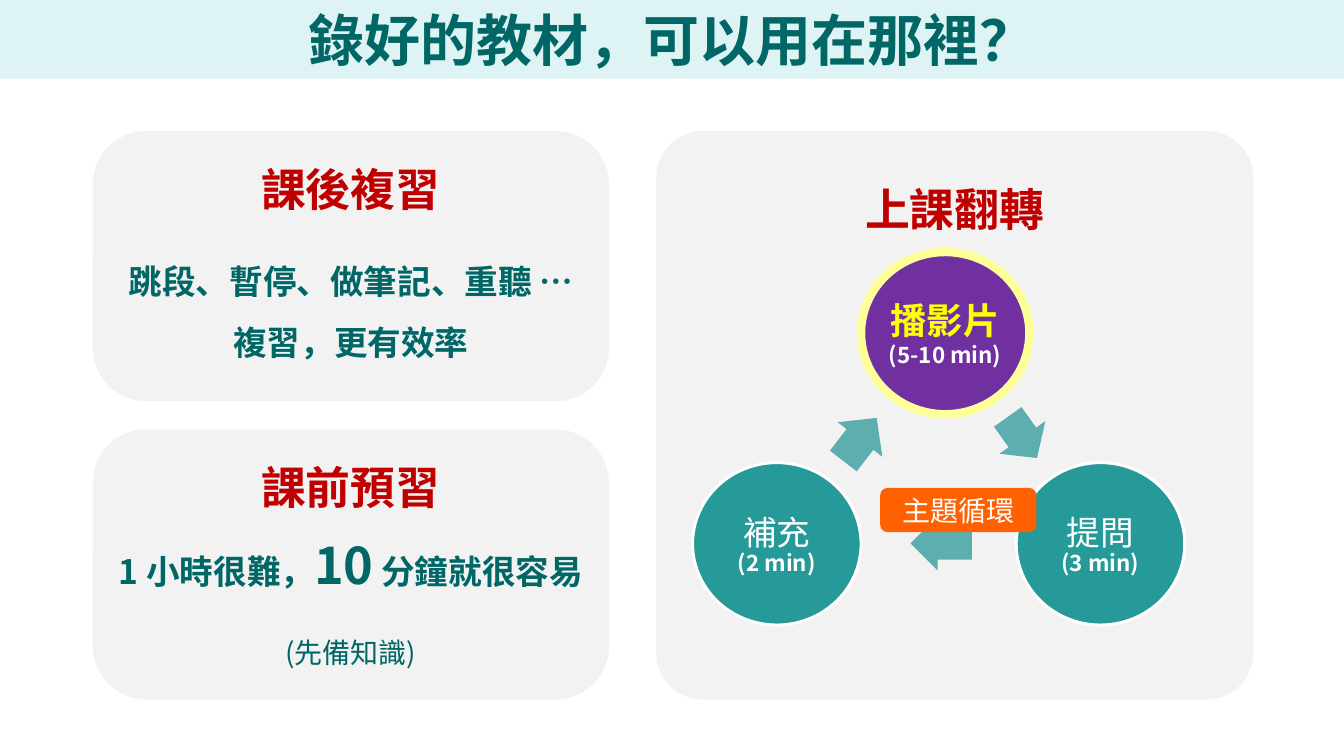
from dataclasses import dataclass
from lxml.etree import SubElement
from pptx import Presentation
from pptx.dml.color import RGBColor
from pptx.enum.shapes import MSO_SHAPE
from pptx.enum.text import MSO_ANCHOR, PP_ALIGN
from pptx.oxml.ns import qn
from pptx.util import Inches, Pt


@dataclass(frozen=True)
class Theme:
    font: str = "Noto Sans CJK SC"
    band: str = "DEF3F3"
    card: str = "F2F2F2"
    dark: str = "006666"
    red: str = "C00000"
    teal: str = "269999"
    arrow: str = "5DAEAE"
    purple: str = "7030A0"
    halo: str = "FFFF99"
    yellow: str = "FFFF00"
    white: str = "FFFFFF"
    orange: str = "FF6000"
    title: int = 40
    heading: int = 32
    big: int = 36
    key: int = 26
    body: int = 24
    small: int = 20
    note: int = 16


T = Theme()


def para(*runs, before=0, line=1.0):
    return runs, before, line


# A run is (text, size, colour, bold); space before is in points.
TITLE = [para(("錄好的教材，可以用在那裡？", T.title, T.dark, True))]
REVIEW = [
    para(("課後複習", T.heading, T.red, True)),
    para(("跳段、暫停、做筆記、重聽 …", T.body, T.dark, True), before=21, line=1.4),
    para(("複習，更有效率", T.body, T.dark, True), line=1.5),
]
PREVIEW = [
    para(("課前預習", T.heading, T.red, True)),
    para(("1 小時很難，", T.body, T.dark, True), ("10", T.big, T.dark, True),
         (" 分鐘就很容易", T.body, T.dark, True), before=15),
    para(("(先備知識)", T.small, T.dark, False), before=29),
]
FLIP = [para(("上課翻轉", T.heading, T.red, True), line=1.6)]
BADGE = [para(("主題循環", T.small, T.white, False))]


def step(name, minutes, size=T.body, color=T.white, bold=False, line=0.9):
    return [para((name, size, color, bold)),
            para((minutes, T.note, T.white, True), line=line)]


# Box, corner radius, anchor, (top, bottom) insets, text
CARDS = [
    ((0.92, 1.3, 5.12, 2.68), 0.198, MSO_ANCHOR.MIDDLE, (0, 0.08), REVIEW),
    ((0.92, 4.26, 5.12, 2.68), 0.198, MSO_ANCHOR.MIDDLE, (0.05, 0.05), PREVIEW),
    ((6.51, 1.3, 5.92, 5.64), 0.082, MSO_ANCHOR.TOP, (0.05, 0.05), FLIP),
]
# Left, top, fill, line colour, line width, text
STEPS = [
    (8.54, 2.5, T.purple, T.halo, 6,
     step("播影片", "(5-10 min)", T.key, T.yellow, True, 1.0)),
    (10.08, 4.59, T.teal, T.white, 2, step("提問", "(3 min)")),
    (6.87, 4.59, T.teal, T.white, 2, step("補充", "(2 min)")),
]
STEP_SIZE = (1.67, 1.61)
# Box, rotation
ARROWS = [
    ((9.89, 4.06, 0.5, 0.56), 54.6),
    ((9.03, 5.12, 0.61, 0.54), 180),
    ((8.26, 4.08, 0.54, 0.56), 307.7),
]


def rgb(value):
    return RGBColor.from_string(value)


def write(sp, paragraphs, anchor=MSO_ANCHOR.MIDDLE, insets=(0.1, 0.05, 0.1, 0.05)):
    """Fill a shape with centred paragraphs; insets are left, top, right, bottom."""
    tf = sp.text_frame
    tf.word_wrap = True
    tf.vertical_anchor = anchor
    tf.margin_left, tf.margin_top, tf.margin_right, tf.margin_bottom = map(Inches, insets)
    for i, (runs, before, line) in enumerate(paragraphs):
        p = tf.add_paragraph() if i else tf.paragraphs[0]
        p.alignment = PP_ALIGN.CENTER
        p.space_before, p.space_after, p.line_spacing = Pt(before), Pt(0), line
        for text, size, color, bold in runs:
            r = p.add_run()
            r.text = text
            r.font.size, r.font.bold, r.font.name = Pt(size), bold, T.font
            r.font.color.rgb = rgb(color)
            SubElement(r.font._element, qn("a:ea")).set("typeface", T.font)


def add(slide, kind, box, fill, adjust=(), line=None):
    sp = slide.shapes.add_shape(kind, *map(Inches, box))
    sp.shadow.inherit = False
    sp.fill.solid()
    sp.fill.fore_color.rgb = rgb(fill)
    for i, value in enumerate(adjust):
        sp.adjustments[i] = value
    if line:
        color, width = line
        sp.line.color.rgb = rgb(color)
        sp.line.width = Pt(width)
    else:
        sp.line.fill.background()
    return sp


def add_title(slide):
    sp = slide.shapes.title
    sp.left, sp.top, sp.width, sp.height = map(Inches, (0, 0, 13.33, 0.78))
    sp.fill.solid()
    sp.fill.fore_color.rgb = rgb(T.band)
    write(sp, TITLE)


def add_cycle(slide):
    for left, top, fill, color, width, text in STEPS:
        sp = add(slide, MSO_SHAPE.OVAL, (left, top, *STEP_SIZE), fill, line=(color, width))
        write(sp, text, insets=(0.03,) * 4)
    for box, angle in ARROWS:
        sp = add(slide, MSO_SHAPE.RIGHT_ARROW, box, T.arrow, (0.6, 0.5))
        sp.rotation = angle
    write(add(slide, MSO_SHAPE.ROUNDED_RECTANGLE, (8.73, 4.84, 1.55, 0.44), T.orange), BADGE)


def main():
    prs = Presentation()
    prs.slide_width, prs.slide_height = Inches(13.33), Inches(7.5)
    slide = prs.slides.add_slide(prs.slide_layouts[5])
    add_title(slide)
    for box, radius, anchor, (top, bottom), text in CARDS:
        sp = add(slide, MSO_SHAPE.ROUNDED_RECTANGLE, box, T.card, (radius,))
        write(sp, text, anchor, (0, top, 0, bottom))
    add_cycle(slide)
    prs.save("out.pptx")


if __name__ == "__main__":
    main()
